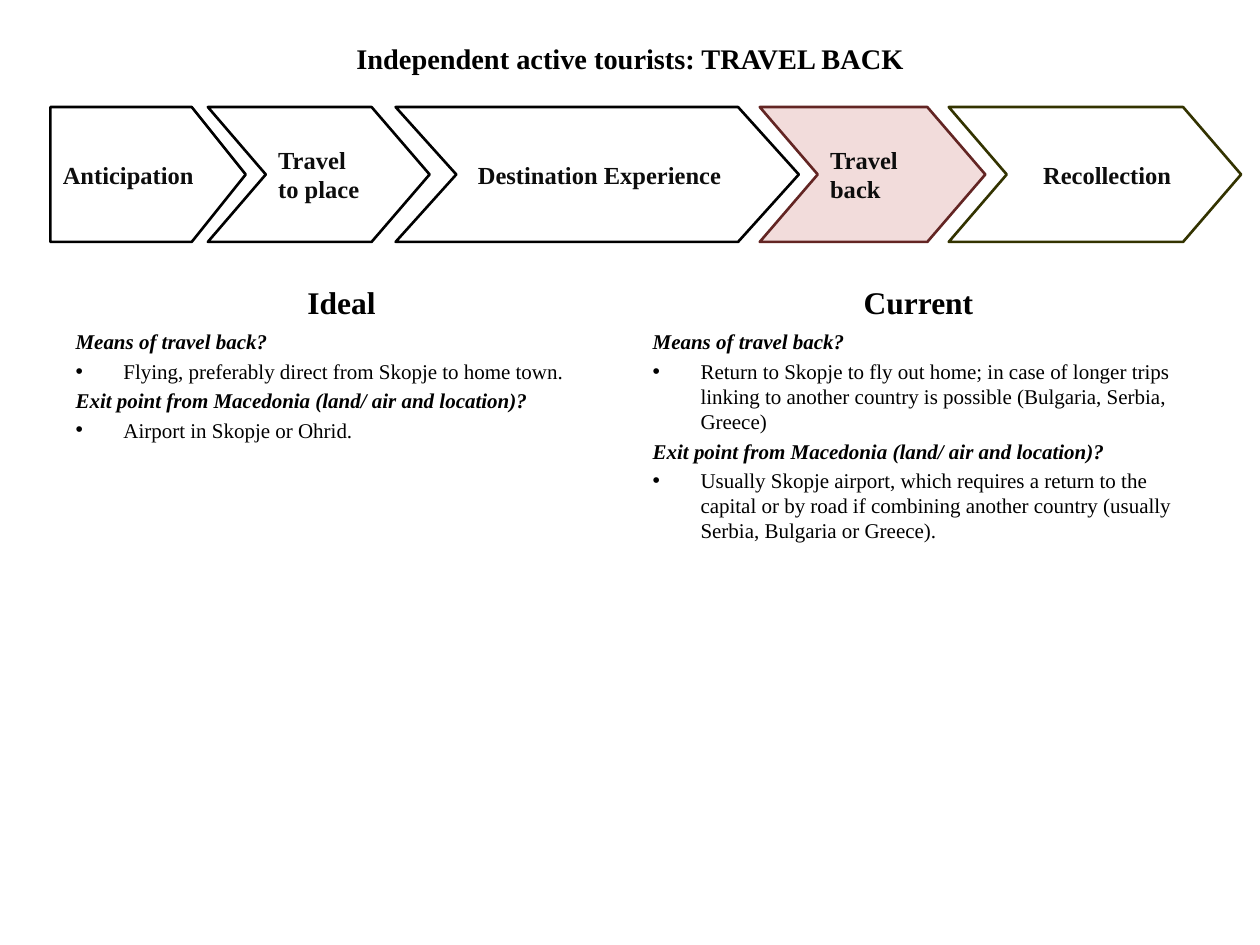
import pptx
import pptx.util
import pptx.dml.color
import pptx.enum.shapes
import pptx.enum.text
import pptx.oxml.ns
from lxml import etree

FONT = "Times New Roman"
COLS, ROWS = 100, 75
HUES = {"ink": "000000", "label": "0D0D0D", "white": "FFFFFF",
        "rose": "F2DCDB", "wine": "632523", "olive": "333300"}
KIND = pptx.enum.shapes.MSO_SHAPE
ALIGN = pptx.enum.text.PP_ALIGN
ANCHOR = pptx.enum.text.MSO_ANCHOR

MEANS = "Means of travel back?"
EXIT = "Exit point from Macedonia (land/ air and location)?"

# kind, left, width, point depth, text, format
STAGES = [
    (KIND.PENTAGON, 4, 15.5, 0.4, "Anticipation", {}),
    (KIND.CHEVRON, 16.5, 17.6, 0.43, "Travel to place", {}),
    (KIND.CHEVRON, 31.4, 32, 0.45, "Destination Experience",
     {"align": ALIGN.CENTER}),
    (KIND.CHEVRON, 60.3, 17.9, 0.43, "Travel back",
     {"fill": "rose", "line": "wine"}),
    (KIND.CHEVRON, 75.3, 23.2, 0.43, "Recollection",
     {"fill": "white", "line": "olive", "left": 0.19}),
]

# left, heading, (question, answer) pairs
SIDES = [
    (5, "Ideal", [
        (MEANS, "Flying, preferably direct from Skopje to home town."),
        (EXIT, "Airport in Skopje or Ohrid.")]),
    (50.8, "Current", [
        (MEANS, "Return to Skopje to fly out home; in case of longer trips "
                "linking to another country is possible (Bulgaria, Serbia, Greece)"),
        (EXIT, "Usually Skopje airport, which requires a return to the capital "
               "or by road if combining another country (usually Serbia, "
               "Bulgaria or Greece).")]),
]


def color(name):
    return pptx.dml.color.RGBColor.from_string(HUES[name])


def write(para, text, size=12, bold=False, italic=False, hue="ink",
          align=ALIGN.LEFT, left=0, hang=0, bullet=None):
    """Fill a paragraph with one run; left and hang are in inches."""
    run = para.add_run()
    run.text = text
    font = run.font
    font.name, font.size = FONT, pptx.util.Pt(size)
    font.bold, font.italic = bold, italic
    font.color.rgb = color(hue)
    para.alignment = align
    props = para._p.get_or_add_pPr()
    props.set("marL", str(pptx.util.Inches(left)))
    props.set("indent", str(pptx.util.Inches(-hang)))
    mark = etree.SubElement(
        props, pptx.oxml.ns.qn("a:buChar" if bullet else "a:buNone"))
    if bullet:
        mark.set("char", bullet)


class Page:
    """Holds the deck, its grid and the current slide."""

    def __init__(self):
        self.deck = pptx.Presentation()
        self.deck.slide_width = pptx.util.Inches(10)
        self.deck.slide_height = pptx.util.Inches(7.5)
        self.slide = self.deck.slides.add_slide(self.deck.slide_layouts[4])

    def box(self, col, row, wide, high):
        """Turn grid cells into slide lengths."""
        x, y = self.deck.slide_width / COLS, self.deck.slide_height / ROWS
        return int(col * x), int(row * y), int(wide * x), int(high * y)

    def holder(self, idx, cells, anchor):
        """Move a template placeholder and return its text frame."""
        shape = self.slide.placeholders[idx]
        shape.left, shape.top, shape.width, shape.height = self.box(*cells)
        frame = shape.text_frame
        frame.auto_size = pptx.enum.text.MSO_AUTO_SIZE.NONE
        frame.vertical_anchor = anchor
        return frame

    def title(self, text):
        frame = self.holder(0, (5, 3, 90, 3.3), ANCHOR.MIDDLE)
        write(frame.paragraphs[0], text, size=16.2, bold=True,
              align=ALIGN.CENTER)

    def stage(self, kind, col, wide, depth, text, fill=None, line="ink",
              **form):
        shape = self.slide.shapes.add_shape(
            kind, *self.box(col, 8.5, wide, 10.7))
        shape.adjustments[0] = depth
        shape.shadow.inherit = False
        if fill:
            shape.fill.solid()
            shape.fill.fore_color.rgb = color(fill)
        else:
            shape.fill.background()
        shape.line.color.rgb = color(line)
        shape.line.width = pptx.util.Pt(1.5)
        frame = shape.text_frame
        frame.word_wrap = True
        frame.margin_right = pptx.util.Inches(0.06)
        frame.vertical_anchor = ANCHOR.MIDDLE
        write(frame.paragraphs[0], text, size=14, bold=True, hue="label",
              **form)

    def side(self, idx, col, head, pairs):
        """Set one column: its heading, then questions with answers."""
        frame = self.holder(idx, (col, 21, 44.2, 5), ANCHOR.BOTTOM)
        write(frame.paragraphs[0], head, size=18, bold=True,
              align=ALIGN.CENTER)
        frame = self.holder(idx + 1, (col, 25.6, 44.2, 47.6), ANCHOR.TOP)
        for spot, (query, reply) in enumerate(pairs):
            para = frame.add_paragraph() if spot else frame.paragraphs[0]
            write(para, query, bold=True, italic=True)
            write(frame.add_paragraph(), reply, left=0.38, hang=0.38,
                  bullet="•")


def main():
    page = Page()
    page.title("Independent active tourists: TRAVEL BACK")
    for spot, side in enumerate(SIDES):
        page.side(1 + 2 * spot, *side)
    for *parts, form in STAGES:
        page.stage(*parts, **form)
    page.deck.save("out.pptx")


if __name__ == "__main__":
    main()
